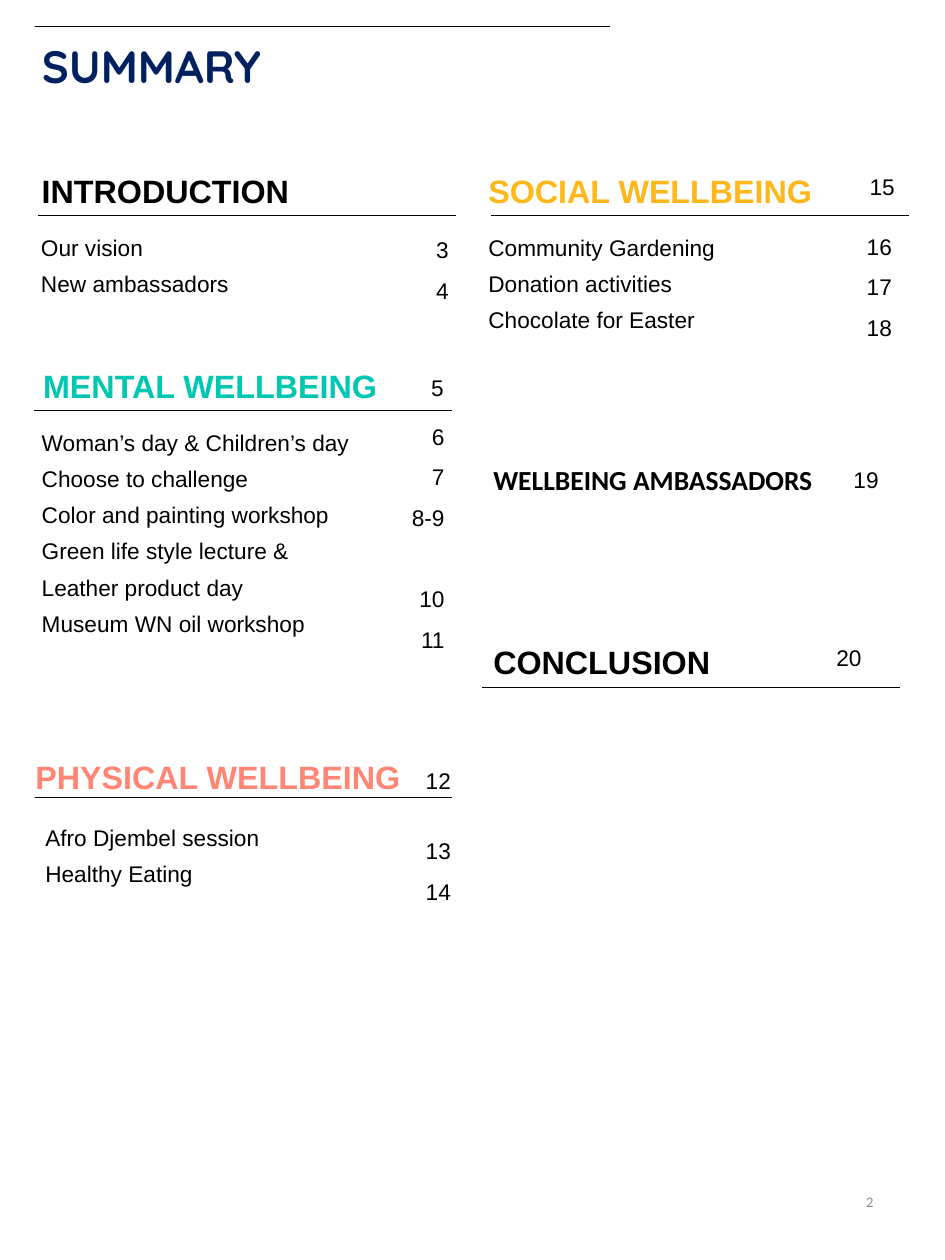
from lxml import etree
from pptx import Presentation
from pptx.dml.color import RGBColor
from pptx.enum.shapes import MSO_CONNECTOR
from pptx.enum.text import MSO_ANCHOR, MSO_AUTO_SIZE, PP_ALIGN
from pptx.oxml.ns import qn
from pptx.util import Inches, Pt

LEFT, RIGHT = PP_ALIGN.LEFT, PP_ALIGN.RIGHT
TOP, MIDDLE = MSO_ANCHOR.TOP, MSO_ANCHOR.MIDDLE
BLACK, NAVY, GREY = "000000", "002060", "8C8C8C"
TEAL, CORAL, AMBER = "00C7B1", "FF8674", "FFB81C"
RULE_WIDTH = 5.89
BODY_SIZE, HEADING_SIZE = 23, 32.8
SKIPPED_LINE = 41

# text, colour, (left, top, width)
HEADINGS = [
    ("INTRODUCTION", BLACK, (0.49, 2.29, 4.23)),
    ("MENTAL WELLBEING", TEAL, (0.51, 5.04, 5.15)),
    ("PHYSICAL WELLBEING", CORAL, (0.4, 10.56, 5.55)),
    ("SOCIAL WELLBEING", AMBER, (6.79, 2.29, 5.55)),
    ("CONCLUSION", BLACK, (6.86, 8.93, 4.8)),
]

# entries, (left, top, width, height)
ENTRIES = [
    (["Our vision", "New ambassadors"], (0.48, 3.25, 3.26, 1.39)),
    (["Woman’s day & Children’s day", "Choose to challenge",
      "Color and painting workshop", "Green life style lecture &",
      "Leather product day", "Museum WN oil workshop"],
     (0.49, 6, 4.87, 3.56)),
    (["Afro Djembel session", "Healthy Eating"], (0.54, 11.57, 4.48, 1.51)),
    (["Community Gardening", "Donation activities", "Chocolate for Easter"],
     (6.79, 3.25, 4.83, 1.51)),
]

# page numbers of the entries, (left, top, width, height)
ENTRY_PAGES = [
    (["3", "4"], (5.29, 3.09, 1.14, 1.19)),
    (["6", "7", "8-9", "10", "11"], (5.23, 5.72, 1.14, 3.58)),
    (["13", "14"], (5.32, 11.57, 1.14, 1.77)),
    (["16", "17", "18"], (10.73, 3.04, 1.95, 1.77)),
]

# page number of the heading, alignment, (left, top, width)
HEADING_PAGES = [
    ("5", RIGHT, (5.36, 5.22, 1)),
    ("12", RIGHT, (5.32, 10.77, 1.14)),
    ("15", RIGHT, (11.58, 2.39, 1.14)),
    ("19", LEFT, (11.94, 6.52, 1.14)),
    ("20", LEFT, (11.7, 9.03, 1.14)),
]

# left, top, width
RULES = [
    (0.49, 0.37, 8.12),
    (0.54, 3.04, RULE_WIDTH),
    (0.48, 5.79, RULE_WIDTH),
    (0.49, 11.25, RULE_WIDTH),
    (6.93, 3.04, RULE_WIDTH),
    (6.8, 9.7, RULE_WIDTH),
]


def rgb(color):
    return RGBColor.from_string(color)


def write(sp, lines, size, color=BLACK, font="Arial", bold=False, align=LEFT,
          spacing=1, after=0, anchor=TOP):
    tf = sp.text_frame
    tf.word_wrap = True
    tf.auto_size = MSO_AUTO_SIZE.NONE
    tf.vertical_anchor = anchor
    tf.text = "\n".join(lines)
    for p in tf.paragraphs:
        p.alignment = align
        p.line_spacing = spacing
        p.space_before = Pt(0)
        p.space_after = Pt(after)
        for r in p.runs:
            r.font.size = Pt(size)
            r.font.name = font
            r.font.bold = bold
            r.font.color.rgb = rgb(color)
    return tf


def add_text(box, lines, size, **style):
    sp = s.shapes.add_textbox(*map(Inches, box))
    return write(sp, lines, size, **style)


def add_rule(left, top, width):
    line = s.shapes.add_connector(MSO_CONNECTOR.STRAIGHT, Inches(left),
                                  Inches(top), Inches(left + width), Inches(top))
    line.line.color.rgb = rgb(BLACK)
    line.line.width = Pt(0.5)
    etree.SubElement(line._element.spPr, qn("a:effectLst"))


prs = Presentation()
prs.slide_width, prs.slide_height = Inches(13.33), Inches(17.78)
s = prs.slides.add_slide(prs.slide_layouts[5])

title = s.shapes.title
title.left, title.top = Inches(0.49), Inches(0.37)
title.width, title.height = Inches(3.76), Inches(0.94)
write(title, ["SUMMARY"], 46, color=NAVY, font="Quicksand", bold=True,
      spacing=1.15, after=9.2)

for rule in RULES:
    add_rule(*rule)

for text, color, place in HEADINGS:
    add_text((*place, 0.68), [text], HEADING_SIZE, color=color, bold=True,
             spacing=1.15, after=9.2)
add_text((6.86, 6.49, 5.08, 0.96), ["WELLBEING AMBASSADORS"], 28,
         font="Calibri", bold=True)

for lines, box in ENTRIES:
    add_text(box, lines, BODY_SIZE, after=9.2)

for pages, box in ENTRY_PAGES:
    tf = add_text(box, pages, BODY_SIZE, align=RIGHT, spacing=1.5)
    for p in tf.paragraphs:
        if p.text == "10":  # its entry runs over two lines
            p.space_before = Pt(SKIPPED_LINE)

for page, align, place in HEADING_PAGES:
    add_text((*place, 0.49), [page], BODY_SIZE, align=align)

add_text((9.42, 16.48, 3, 0.95), ["2"], 14.8, color=GREY, font="Calibri",
         align=RIGHT, anchor=MIDDLE)

prs.save("out.pptx")
